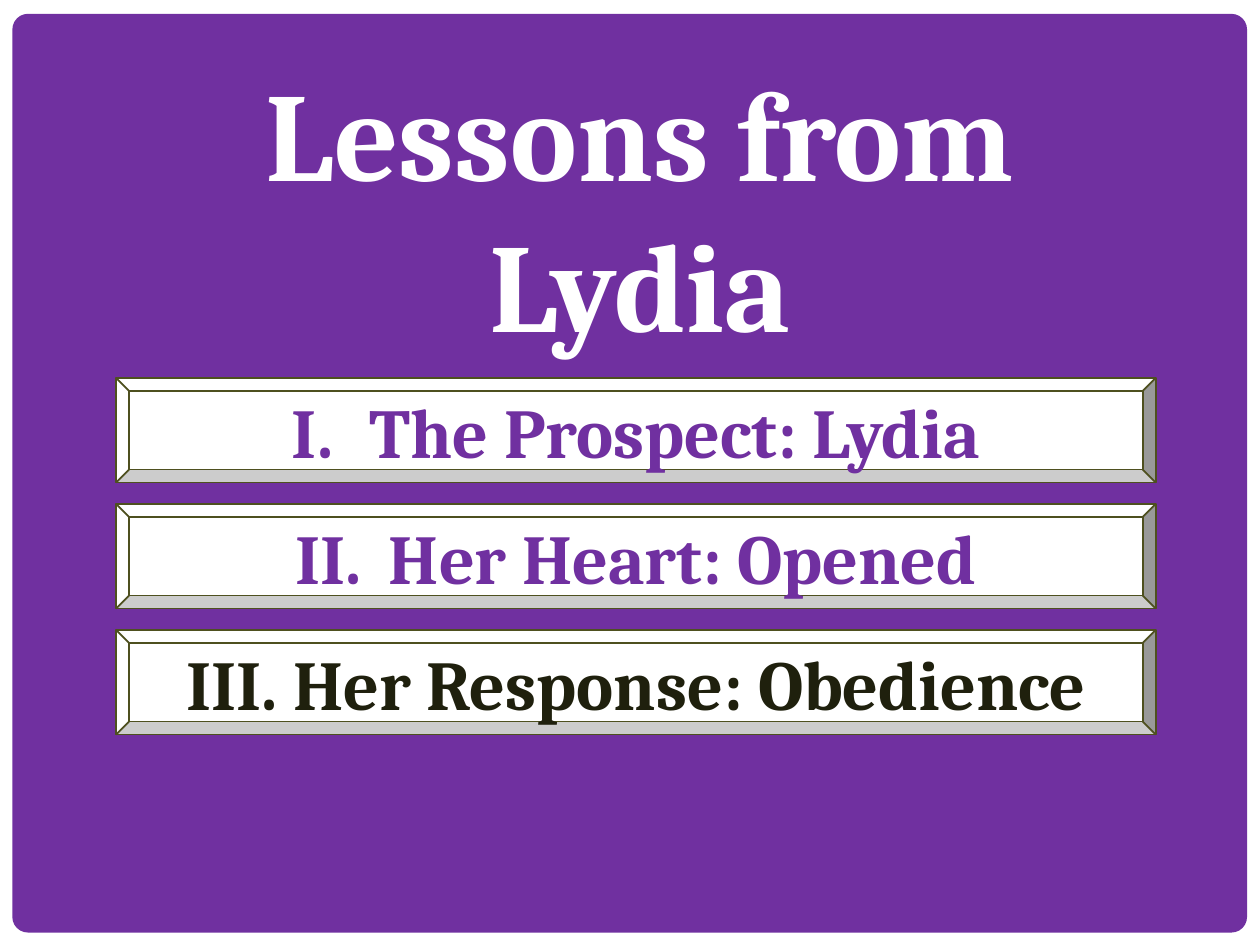
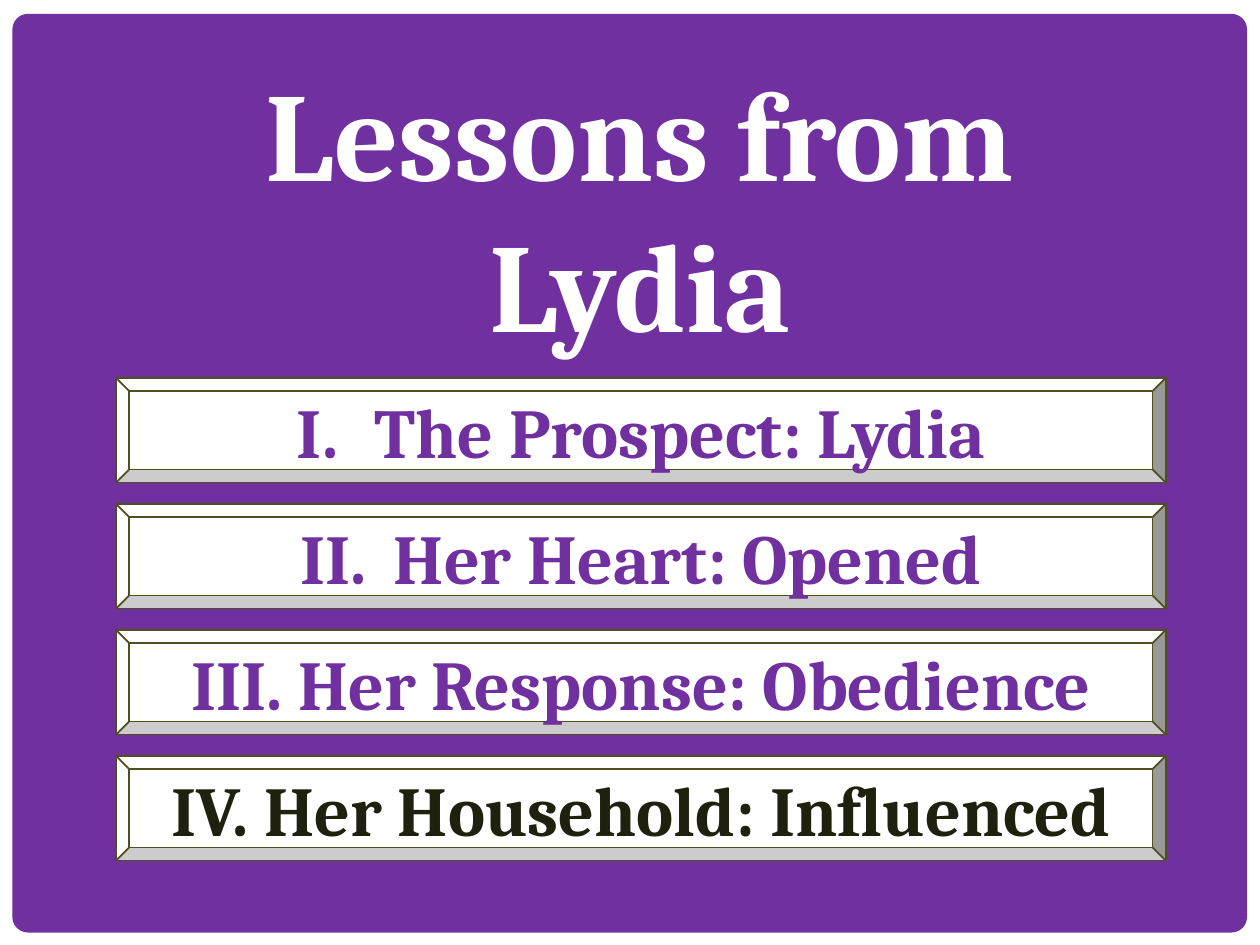
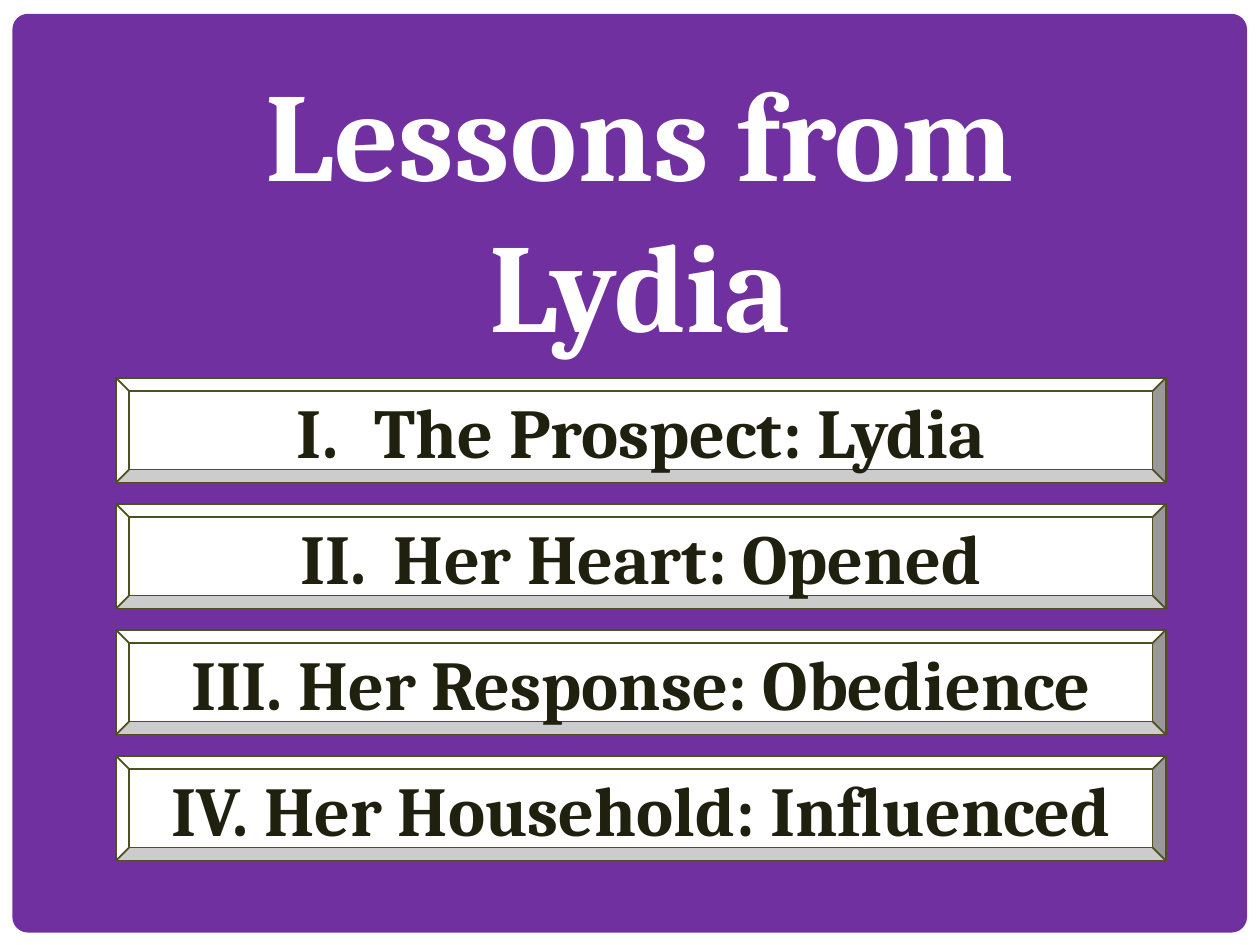
from lxml import etree
from pptx import Presentation
from pptx.dml.color import RGBColor
from pptx.enum import shapes, text
from pptx.oxml.ns import qn
from pptx.util import Cm, Pt

PURPLE, WHITE, OLIVE, DARK = "7030A0", "FFFFFF", "4E501F", "1F200D"
FONT = "Cambria"
TITLE = ["Lessons from", "Lydia"]
LESSONS = [
    "The Prospect: Lydia",
    " Her Heart: Opened",
    " Her Response: Obedience",
    " Her Household: Influenced",
]
TITLE_CENTER = 12.9
BAR_LEFT, BAR_TOP, BAR_HEIGHT, BAR_PITCH = 2.34, 7.62, 2.11, 2.54
INDENT = 1.57


def rgb(value):
    return RGBColor.from_string(value)


def add_box(s, kind, left, top, width, height, fill, line=None):
    sp = s.shapes.add_shape(kind, Cm(left), Cm(top), Cm(width), Cm(height))
    sp.shadow.inherit = False
    sp.fill.solid()
    sp.fill.fore_color.rgb = rgb(fill)
    if line:
        sp.line.color.rgb = rgb(line)
        sp.line.width = Pt(1)
    else:
        sp.line.fill.background()
    return sp


def add_run(p, content, size, color):
    p.alignment = text.PP_ALIGN.CENTER
    r = p.add_run()
    r.text = content
    r.font.name = FONT
    r.font.size = Pt(size)
    r.font.bold = True
    r.font.color.rgb = rgb(color)


def number_paragraph(p, number):
    pPr = p._p.get_or_add_pPr()
    pPr.set("marL", str(Cm(INDENT)))
    pPr.set("indent", str(-Cm(INDENT)))
    bullet = etree.SubElement(pPr, qn("a:buAutoNum"), type="romanUcPeriod")
    if number > 1:
        bullet.set("startAt", str(number))


def frame_layout(layout, s):
    for placeholder in list(layout.placeholders):
        if placeholder.placeholder_format.type != shapes.PP_PLACEHOLDER.TITLE:
            layout.shapes.element.remove(placeholder.element)
    layout.background.fill.solid()
    layout.background.fill.fore_color.rgb = rgb(PURPLE)
    border = add_box(s, shapes.MSO_SHAPE.RECTANGLE, 0, 0, 25.4, 19.05, WHITE)
    panel = add_box(s, shapes.MSO_SHAPE.ROUNDED_RECTANGLE,
                    0.25, 0.28, 24.89, 18.52, PURPLE)
    panel.adjustments[0] = 0.017
    for position, sp in enumerate((border, panel), start=2):
        layout.shapes.element.insert(position, sp.element)


def set_title(s, width):
    sp = s.shapes.title
    sp.left, sp.top = Cm(TITLE_CENTER - width / 2), Cm(0.99)
    sp.width, sp.height = Cm(width), Cm(6.4)
    tf = sp.text_frame
    tf.word_wrap = False
    tf.auto_size = text.MSO_AUTO_SIZE.SHAPE_TO_FIT_TEXT
    tf.vertical_anchor = text.MSO_ANCHOR.TOP
    for i, line in enumerate(TITLE):
        p = tf.add_paragraph() if i else tf.paragraphs[0]
        add_run(p, line, 72, WHITE)


def add_lesson(s, number, width, color):
    top = BAR_TOP + (number - 1) * BAR_PITCH
    sp = add_box(s, shapes.MSO_SHAPE.BEVEL, BAR_LEFT, top, width, BAR_HEIGHT,
                 WHITE, OLIVE)
    tf = sp.text_frame
    tf.vertical_anchor = text.MSO_ANCHOR.MIDDLE
    p = tf.paragraphs[0]
    add_run(p, LESSONS[number - 1], 40, color)
    number_paragraph(p, number)


def add_lessons_slide(s, title_width, bar_width, count, highlighted):
    set_title(s, title_width)
    for number in range(1, count + 1):
        color = DARK if number in highlighted else PURPLE
        add_lesson(s, number, bar_width, color)


def main():
    prs = Presentation()
    prs.slide_width, prs.slide_height = Cm(25.4), Cm(19.05)
    layout = prs.slide_layouts[5]
    slides = [prs.slides.add_slide(layout) for _ in range(3)]
    frame_layout(layout, slides[0])
    add_lessons_slide(slides[0], 16.1, 20.96, 3, {3})
    add_lessons_slide(slides[1], 16.76, 21.16, 4, {4})
    add_lessons_slide(slides[2], 16.1, 21.16, 4, {1, 2, 3, 4})
    prs.save("out.pptx")


if __name__ == "__main__":
    main()
